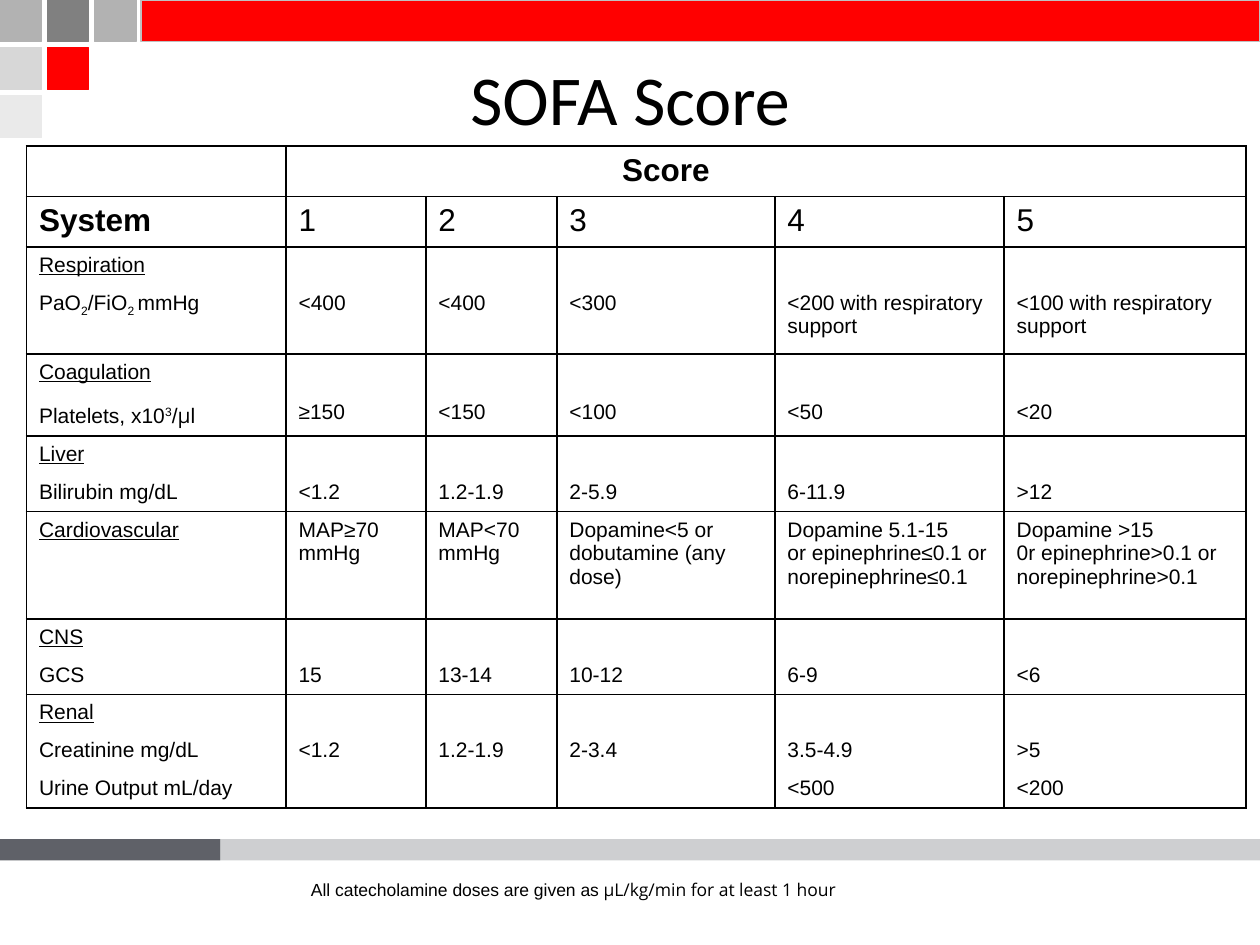
from pptx import Presentation
from pptx.dml.color import RGBColor as RGB
from pptx.enum.shapes import MSO_SHAPE as Shape
from pptx.enum.text import MSO_ANCHOR as Anchor, PP_ALIGN as Align
from pptx.oxml.ns import qn
from pptx.util import Inches, Pt
from lxml.etree import SubElement as Sub

HUES = {
    "black": "000000", "white": "FFFFFF", "red": "FF0000", "slate": "5F6168",
    "mid": "B2B2B2", "dark": "808080", "light": "D7D7D7", "pale": "EAEAEA",
    "edge": "C0C0C0",
}
NO_STYLE = "{2D5ABB26-0587-4C30-8999-92F81FD0307C}"
COLS = [2.06, 1.11, 1.04, 1.73, 1.82, 1.92]

# Each group holds (height, cells) rows; rules are drawn only between groups
GROUPS = [
    [(0.38, ["", "", "", "Score", "", ""])],
    [(0.38, ["System", "1", "2", "3", "4", "5"])],
    [(0.29, ["Respiration"]),
     (0.55, [[("PaO", {}), ("2", {"base": -25}), ("/FiO", {}),
              ("2 ", {"base": -25}), ("mmHg", {})],
             "<400", "<400", "<300", "<200 with respiratory support",
             "<100 with respiratory support"])],
    [(0.32, ["Coagulation"]),
     (0.33, [[("Platelets, x10", {}), ("3", {"base": 30}), ("/", {}),
              ("μ", {"face": "Open Sans"}), ("l", {})],
             "≥150", "<150", "<100", "<50", "<20"])],
    [(0.29, ["Liver"]),
     (0.28, ["Bilirubin mg/dL", "<1.2", "1.2-1.9", "2-5.9", "6-11.9", ">12"])],
    [(0.85, ["Cardiovascular", "MAP≥70 mmHg", "MAP<70 mmHg",
             "Dopamine<5 or dobutamine (any dose)",
             "Dopamine 5.1-15\nor epinephrine≤0.1 or norepinephrine≤0.1",
             "Dopamine >15\n0r epinephrine>0.1 or norepinephrine>0.1"])],
    [(0.29, ["CNS"]),
     (0.28, ["GCS", "15", "13-14", "10-12", "6-9", "<6"])],
    [(0.29, ["Renal"]),
     (0.28, ["Creatinine mg/dL", "<1.2", "1.2-1.9", "2-3.4", "3.5-4.9", ">5"]),
     (0.29, ["Urine Output mL/day", "", "", "", "<500", "<200"])],
]


def hue(name):
    return RGB.from_string(HUES[name])


def add_run(para, text, size, face="Arial", bold=False, under=False, base=0):
    run = para.add_run()
    run.text = text
    font = run.font
    font.size, font.name, font.bold = Pt(size), face, bold
    font.underline = under
    font.color.rgb = hue("black")
    if base:
        run._r.get_or_add_rPr().set("baseline", str(base * 1000))


def add_block(slide, x, y, w, h, fill, line=None, alpha=None):
    block = slide.shapes.add_shape(
        Shape.RECTANGLE, Inches(x), Inches(y), Inches(w), Inches(h))
    block.shadow.inherit = False
    block.fill.solid()
    block.fill.fore_color.rgb = hue(fill)
    if alpha:
        clr = block._element.spPr.find(qn("a:solidFill"))[0]
        Sub(clr, qn("a:alpha"), val=str(alpha * 1000))
    if line:
        block.line.color.rgb = hue(line)
        block.line.width = Pt(0.75)
    else:
        block.line.fill.background()


def add_text(slide, x, y, w, h, runs, align=Align.LEFT, anchor=Anchor.TOP):
    box = slide.shapes.add_textbox(Inches(x), Inches(y), Inches(w), Inches(h))
    frame = box.text_frame
    frame.word_wrap = True
    frame.vertical_anchor = anchor
    para = frame.paragraphs[0]
    para.alignment = align
    for text, size, face in runs:
        add_run(para, text, size, face)


def set_edges(cell, sides):
    props = cell._tc.get_or_add_tcPr()
    for side in "LRTB":
        edge = Sub(props, qn("a:ln" + side), w=str(Pt(1)))
        if side in sides:
            fill = Sub(edge, qn("a:solidFill"))
            Sub(fill, qn("a:srgbClr"), val=HUES["black"])
        else:
            Sub(edge, qn("a:noFill"))


def fill_cell(cell, value, size, bold, under, align):
    frame = cell.text_frame
    lines = value.split("\n") if isinstance(value, str) else [value]
    for i, line in enumerate(lines):
        para = frame.add_paragraph() if i else frame.paragraphs[0]
        para.alignment = align
        if not line:
            # An empty cell still needs its size to keep the row height
            Sub(para._p, qn("a:endParaRPr"), sz=str(size * 100))
            continue
        runs = [(line, {})] if isinstance(line, str) else line
        for text, opts in runs:
            add_run(para, text, size, bold=bold, under=under, **opts)


def add_scores(slide, x, y):
    rows = [(g, i, high, cells) for g, group in enumerate(GROUPS)
            for i, (high, cells) in enumerate(group)]
    frame = slide.shapes.add_table(
        len(rows), len(COLS), Inches(x), Inches(y),
        Inches(sum(COLS)), Inches(sum(row[2] for row in rows)))
    table = frame.table
    table.first_row = table.horz_banding = False
    table._tbl.tblPr.find(qn("a:tableStyleId")).text = NO_STYLE
    for c, wide in enumerate(COLS):
        table.columns[c].width = Inches(wide)

    last = len(COLS) - 1
    for r, (g, i, high, cells) in enumerate(rows):
        table.rows[r].height = Inches(high)
        for c in range(len(COLS)):
            cell = table.cell(r, c)
            value = cells[c] if c < len(cells) else ""
            head = g < 2
            fill_cell(cell, value, 18 if head else 12,
                      bold=g == 0 or (g == 1 and c == 0),
                      under=not head and i == 0 and c == 0,
                      align=Align.CENTER if g == 0 else Align.LEFT)
            # The top row is open between its score columns
            sides = "T" if i == 0 else ""
            sides += "B" if i == len(GROUPS[g]) - 1 else ""
            sides += "L" if g or c < 2 else ""
            sides += "R" if g or c in (0, last) else ""
            set_edges(cell, sides)
            cell.fill.solid()
            cell.fill.fore_color.rgb = hue("white")


def main():
    deck = Presentation()
    deck.slide_width, deck.slide_height = Inches(10), Inches(7.5)
    slide = deck.slides.add_slide(deck.slide_layouts[6])

    # Corner mosaic and top bar
    mosaic = [["mid", "dark", "mid"], ["light", "red"], ["pale"]]
    for r, tones in enumerate(mosaic):
        for c, tone in enumerate(tones):
            add_block(slide, c * 0.375, r * 0.38, 0.33, 0.33, tone, tone)
    add_block(slide, 1.12, 0, 8.88, 0.33, "red", "edge")

    # Bottom bar
    add_block(slide, 0, 6.66, 1.75, 0.17, "slate")
    add_block(slide, 1.75, 6.66, 8.25, 0.17, "slate", alpha=30)

    # Title, table and footnote
    add_text(slide, 1, 0.38, 8, 0.78, [("SOFA Score", 40, "Calibri")],
             Align.CENTER, Anchor.MIDDLE)
    add_scores(slide, 0.21, 1.16)
    add_text(slide, 2.37, 6.93, 4.67, 0.27, [
        ("All catecholamine doses are given as ", 10, "Arial"),
        ("μL/kg/min for at least 1 hour", 10, "Open Sans")])

    deck.save("out.pptx")


if __name__ == "__main__":
    main()
